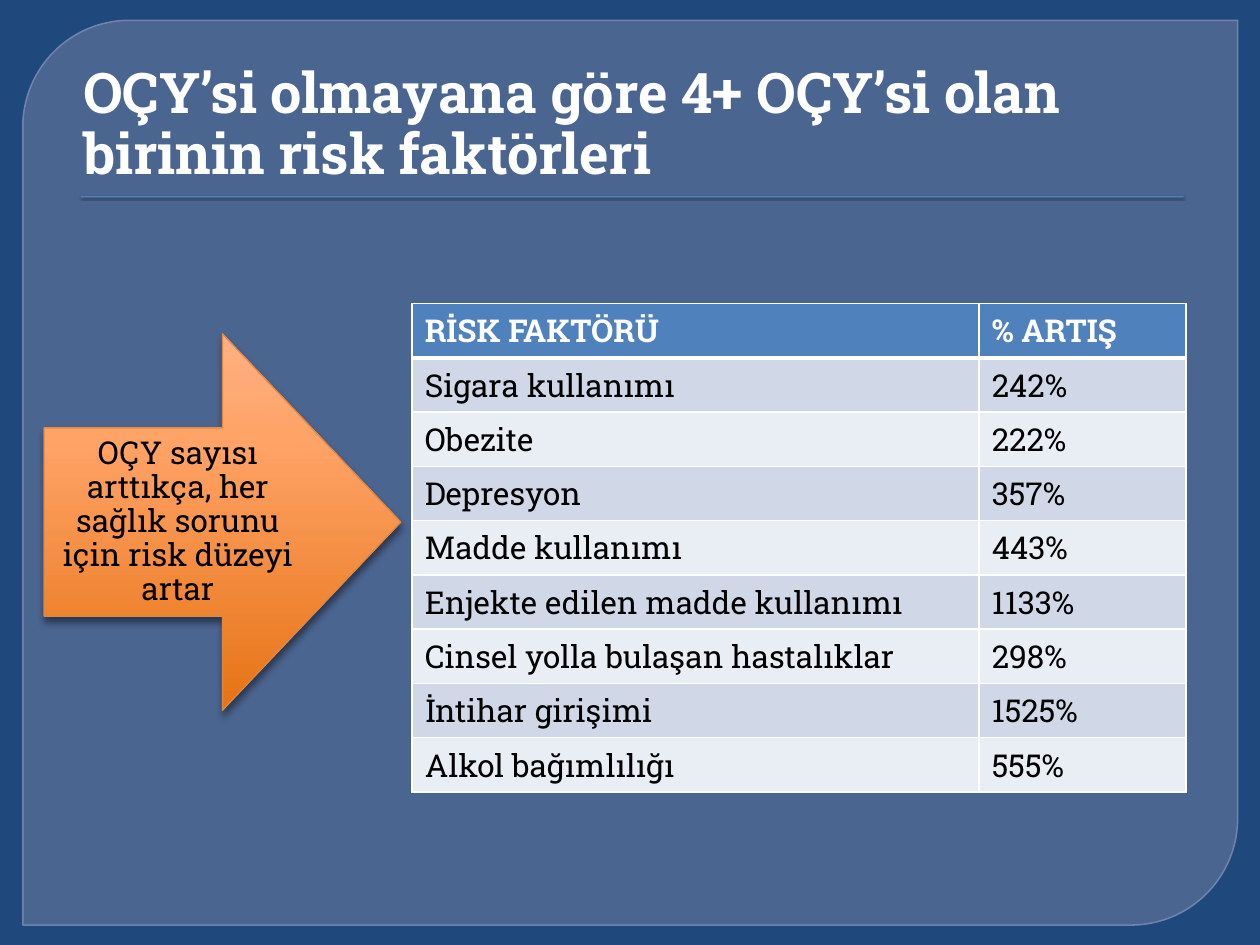
import pptx
import pptx.util
import pptx.dml.color
import pptx.enum.shapes
import pptx.enum.text
import pptx.oxml
import pptx.oxml.ns

Cm = pptx.util.Cm
Pt = pptx.util.Pt
RGB = pptx.dml.color.RGBColor.from_string
KIND = pptx.enum.shapes.MSO_SHAPE
ALIGN = pptx.enum.text.PP_ALIGN
ANCHOR = pptx.enum.text.MSO_ANCHOR
NS = pptx.oxml.ns.nsdecls("a")

theme = {
    "font": "Roboto Slab",
    "head": 32, "body": 18,
    "back": "1F497D", "panel": "63759D", "edge": "7989B3",
    "blue": "4F81BD", "white": "FFFFFF", "black": "000000",
    "bands": ["E9EDF4", "D0D8E8"],
    "rim": "E08840",
    "glow": [(0, "E67314"), (72, "FFA367"), (100, "FFB083")],
}


def style(frame, size, color, bold=False, **form):
    para = frame.paragraphs[0]
    for key, val in form.items():
        setattr(para, key, val)
    font = para.runs[0].font
    look = {"name": theme["font"], "size": Pt(size), "bold": bold}
    for key, val in look.items():
        setattr(font, key, val)
    font.color.rgb = RGB(color)


def shade(shape, alpha, blur, dist):
    shape._element.spPr.append(pptx.oxml.parse_xml(
        f'<a:effectLst {NS}><a:outerShdw blurRad="{Pt(blur)}" dist="{Pt(dist)}" '
        f'dir="5400000" rotWithShape="0"><a:srgbClr val="{theme["black"]}">'
        f'<a:alpha val="{alpha * 1000}"/></a:srgbClr></a:outerShdw></a:effectLst>'))


deck = pptx.Presentation()
deck.slide_width, deck.slide_height = Cm(25.4), Cm(19.05)
slide = deck.slides.add_slide(deck.slide_layouts[5])
slide.background.fill.solid()
slide.background.fill.fore_color.rgb = RGB(theme["back"])
shapes = slide.shapes
title = shapes.title

panel = shapes.add_shape(KIND.ROUND_2_DIAG_RECTANGLE, Cm(0.46), Cm(0.41), Cm(24.49), Cm(18.24))
panel.shadow.inherit = False
panel.adjustments[0] = 0.118
panel.line.width = Pt(0.87)
for part, color, alpha in [(panel.fill, "panel", 65), (panel.line.fill, "edge", 88)]:
    part.solid()
    part.fore_color.rgb = RGB(theme[color])
    tint = part._xPr.find(".//" + pptx.oxml.ns.qn("a:srgbClr"))
    tint.append(pptx.oxml.parse_xml(f'<a:alpha {NS} val="{alpha * 1000}"/>'))

rule = shapes.add_shape(KIND.RECTANGLE, Cm(1.63), Cm(3.95), Cm(22.23), Cm(0.03))
rule.fill.solid()
rule.fill.fore_color.rgb = RGB(theme["blue"])
rule.line.fill.background()
shade(rule, 75, 1, 1)

shapes._spTree.append(title._element)
place = {"left": Cm(1.27), "top": Cm(0.71), "width": Cm(22.86), "height": Cm(3.18)}
for key, val in place.items():
    setattr(title, key, val)
frame = title.text_frame
frame.text = "OÇY’si olmayana göre 4+ OÇY’si olan birinin risk faktörleri"
frame.vertical_anchor = ANCHOR.BOTTOM
frame.auto_size = pptx.enum.text.MSO_AUTO_SIZE.NONE
frame.margin_left = Cm(0.41)
style(frame, theme["head"], theme["white"], True, alignment=ALIGN.LEFT, line_spacing=0.9)

rows = [
    ("RİSK FAKTÖRÜ", "% ARTIŞ"),
    ("Sigara kullanımı", "242%"),
    ("Obezite", "222%"),
    ("Depresyon", "357%"),
    ("Madde kullanımı", "443%"),
    ("Enjekte edilen madde kullanımı", "1133%"),
    ("Cinsel yolla bulaşan hastalıklar", "298%"),
    ("İntihar girişimi", "1525%"),
    ("Alkol bağımlılığı", "555%"),
]
wide = [Cm(11.43), Cm(4.17)]
tall = Cm(1.09)
table = shapes.add_table(len(rows), 2, Cm(8.31), Cm(6.12), sum(wide), tall * len(rows)).table
for col, width in zip(table.columns, wide):
    col.width = width
for r, row in enumerate(rows):
    table.rows[r].height = tall
    head = r == 0
    for c, text in enumerate(row):
        cell = table.cell(r, c)
        cell.text = text
        cell.fill.solid()
        cell.fill.fore_color.rgb = RGB(theme["blue"] if head else theme["bands"][r % 2])
        style(cell.text_frame, theme["body"], theme["white" if head else "black"], head)
        for n, side in enumerate("LRTB"):
            thick = 3 if (r, side) in [(0, "B"), (1, "T")] else 1
            cell._tc.tcPr.insert(n, pptx.oxml.parse_xml(
                f'<a:ln{side} {NS} w="{Pt(thick)}"><a:solidFill>'
                f'<a:srgbClr val="{theme["white"]}"/></a:solidFill></a:ln{side}>'))

arrow = shapes.add_shape(KIND.RIGHT_ARROW, Cm(0.89), Cm(6.73), Cm(7.19), Cm(7.59))
arrow.line.color.rgb = RGB(theme["rim"])
arrow.line.width = Pt(0.75)
stops = "".join(f'<a:gs pos="{pos * 1000}"><a:srgbClr val="{color}"/></a:gs>'
                for pos, color in theme["glow"])
arrow._element.spPr.insert(2, pptx.oxml.parse_xml(
    f'<a:gradFill {NS} rotWithShape="1"><a:gsLst>{stops}</a:gsLst>'
    '<a:lin ang="16200000" scaled="0"/></a:gradFill>'))
shade(arrow, 43, 4, 3)
frame = arrow.text_frame
frame.text = "OÇY sayısı arttıkça, her sağlık sorunu için risk düzeyi artar"
frame.word_wrap = True
frame.vertical_anchor = ANCHOR.MIDDLE
style(frame, theme["body"], theme["black"], alignment=ALIGN.CENTER, line_spacing=0.9)

deck.save("out.pptx")
